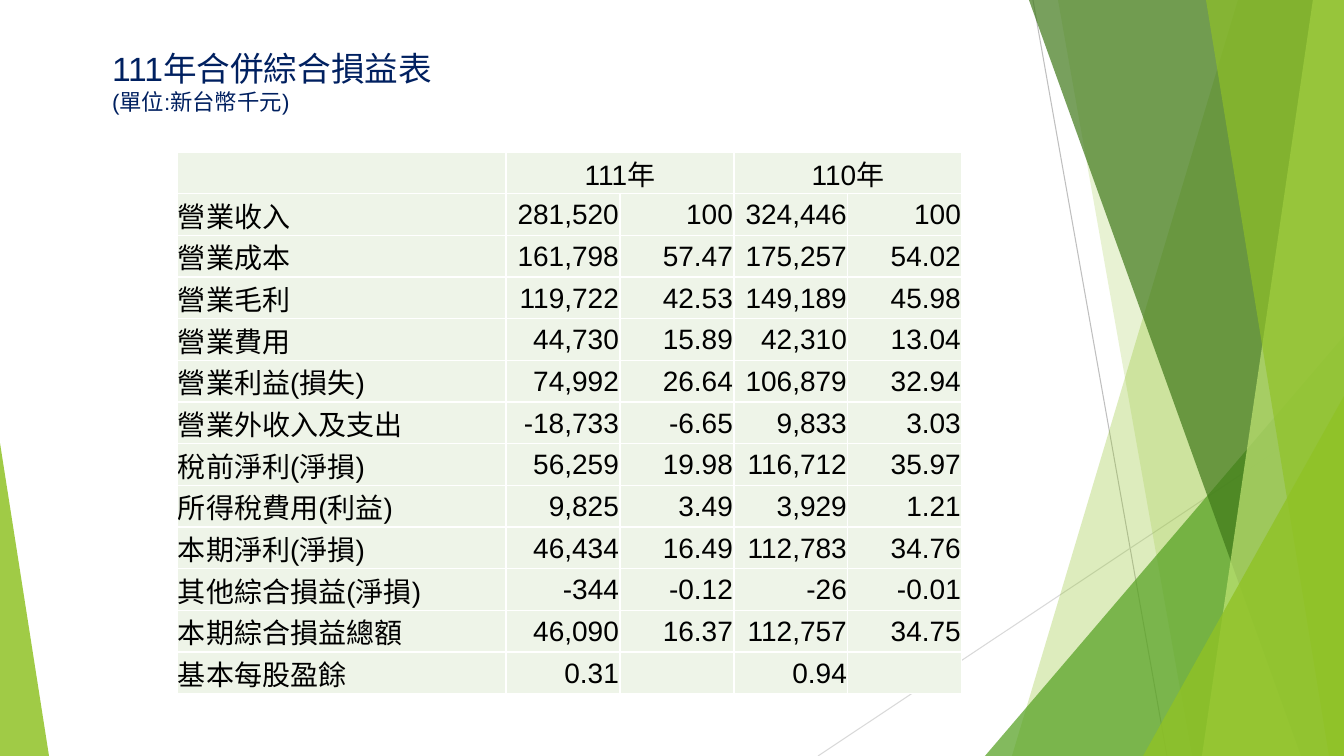
from lxml import etree
from pptx import Presentation
from pptx.dml.color import RGBColor
from pptx.enum.shapes import MSO_CONNECTOR, MSO_SHAPE
from pptx.enum.text import MSO_ANCHOR, MSO_AUTO_SIZE, PP_ALIGN
from pptx.oxml.ns import qn
from pptx.util import Pt

STRAIGHT = MSO_CONNECTOR.STRAIGHT
TRIANGLE = MSO_SHAPE.ISOSCELES_TRIANGLE
TOP, MIDDLE = MSO_ANCHOR.TOP, MSO_ANCHOR.MIDDLE
NO_AUTOFIT = MSO_AUTO_SIZE.NONE
LEFT, CENTER, RIGHT = PP_ALIGN.LEFT, PP_ALIGN.CENTER, PP_ALIGN.RIGHT

EMU_PER_PX = 914400 / 100.8
WIDTH, HEIGHT = 1344, 756
TITLE_ONLY = 5

INCOME_STATEMENT = [
    ("", "111年", "", "110年", ""),
    ("營業收入", "281,520", "100", "324,446", "100"),
    ("營業成本", "161,798", "57.47", "175,257", "54.02"),
    ("營業毛利", "119,722", "42.53", "149,189", "45.98"),
    ("營業費用", "44,730", "15.89", "42,310", "13.04"),
    ("營業利益(損失)", "74,992", "26.64", "106,879", "32.94"),
    ("營業外收入及支出", "-18,733", "-6.65", "9,833", "3.03"),
    ("稅前淨利(淨損)", "56,259", "19.98", "116,712", "35.97"),
    ("所得稅費用(利益)", "9,825", "3.49", "3,929", "1.21"),
    ("本期淨利(淨損)", "46,434", "16.49", "112,783", "34.76"),
    ("其他綜合損益(淨損)", "-344", "-0.12", "-26", "-0.01"),
    ("本期綜合損益總額", "46,090", "16.37", "112,757", "34.75"),
    ("基本每股盈餘", "0.31", "", "0.94", ""),
]


def px(length):
    return round(length * EMU_PER_PX)


def rgb(color):
    return RGBColor.from_string(color)


class StatementSlide:
    font = "Arial"
    title_color = "002060"
    text_color = "000000"
    cell_color = "EEF4E8"
    border_color = "FFFFFF"

    def __init__(self, deck):
        self.slide = deck.slides.add_slide(deck.slide_layouts[TITLE_ONLY])
        self.shapes = self.slide.shapes

    def style_run(self, run, size, color):
        run.font.name = self.font
        run.font.size = Pt(size)
        run.font.color.rgb = rgb(color)

    def line(self, x1, y1, x2, y2, color):
        line = self.shapes.add_connector(STRAIGHT, px(x1), px(y1), px(x2), px(y2))
        line.line.color.rgb = rgb(color)
        line.line.width = Pt(0.75)
        etree.SubElement(line.element.spPr, qn("a:effectLst"))

    def paint(self, shape, color, opacity):
        """Fill the shape at an opacity in percent, with no line or shadow."""
        shape.shadow.inherit = False
        shape.line.fill.background()
        shape.fill.solid()
        shape.fill.fore_color.rgb = rgb(color)
        color_node = shape.element.spPr.find(qn("a:solidFill"))[0]
        etree.SubElement(color_node, qn("a:alpha"), val=str(opacity * 1000))

    def slab(self, top_x, bottom_x, color, opacity):
        """Draw a full-height slanted panel reaching the right slide edge."""
        outline = self.shapes.build_freeform(top_x, 0, scale=EMU_PER_PX)
        outline.add_line_segments([(WIDTH, 0), (WIDTH, HEIGHT), (bottom_x, HEIGHT)])
        self.paint(outline.convert_to_shape(), color, opacity)

    def triangle(self, x, y, width, apex, color, opacity):
        """Draw a triangle standing on the bottom slide edge; apex is 0 to 1."""
        corner = self.shapes.add_shape(TRIANGLE, px(x), px(y), px(width), px(HEIGHT - y))
        corner.adjustments[0] = apex
        self.paint(corner, color, opacity)

    def title(self, x, y, width, height, text, sizes):
        title = self.shapes.title
        title.left, title.top = px(x), px(y)
        title.width, title.height = px(width), px(height)
        frame = title.text_frame
        frame.text = text
        frame.word_wrap = True
        frame.auto_size = NO_AUTOFIT
        frame.vertical_anchor = TOP
        heading = frame.paragraphs[0]
        heading.alignment = LEFT
        for run, size in zip(heading.runs, sizes):
            self.style_run(run, size, self.title_color)
        # The heading lies in front of the decoration.
        title.element.getparent().append(title.element)

    def cell(self, cell, text, alignment):
        cell.margin_left = cell.margin_right = cell.margin_top = px(1)
        cell.margin_bottom = 0
        cell.vertical_anchor = MIDDLE
        properties = cell._tc.get_or_add_tcPr()
        for side in ("a:lnL", "a:lnR", "a:lnT", "a:lnB"):
            border = etree.SubElement(properties, qn(side), w=str(Pt(1)))
            fill = etree.SubElement(border, qn("a:solidFill"))
            etree.SubElement(fill, qn("a:srgbClr"), val=self.border_color)
        cell.fill.solid()
        cell.fill.fore_color.rgb = rgb(self.cell_color)
        if text:
            cell.text_frame.text = text
            entry = cell.text_frame.paragraphs[0]
            entry.alignment = alignment
            self.style_run(entry.runs[0], 20, self.text_color)

    def table(self, x, y, widths, height, rows):
        frame = self.shapes.add_table(
            len(rows), len(widths), px(x), px(y), px(sum(widths)), px(height))
        table = frame.table
        table.first_row = table.horz_banding = False
        for column, width in zip(table.columns, widths):
            column.width = px(width)
        for year_col in (1, 3):
            table.cell(0, year_col).merge(table.cell(0, year_col + 1))
        for r, row in enumerate(rows):
            for c, text in enumerate(row):
                alignment = LEFT if c == 0 else CENTER if r == 0 else RIGHT
                self.cell(table.cell(r, c), text, alignment)


def main():
    deck = Presentation()
    deck.slide_width, deck.slide_height = px(WIDTH), px(HEIGHT)
    page = StatementSlide(deck)

    page.line(1033, 0, 1167, HEIGHT, "BFBFBF")
    page.line(WIDTH, 406, 818, HEIGHT, "D9D9D9")
    page.slab(1238, 1012, "90C226", 30)
    page.slab(1058, 1192, "90C226", 20)
    page.triangle(985, 336, 359, 1, "54A021", 72)
    page.slab(1029, 1301, "3F7819", 70)
    page.slab(1313, 1202, "C0E474", 70)
    page.slab(1206, 1329, "90C226", 65)
    page.triangle(1143, 396, 201, 1, "90C226", 80)
    page.triangle(0, 443, 49, 0, "90C226", 85)

    page.title(102, 43, 948, 145, "111年合併綜合損益表\v(單位:新台幣千元)", (24, 16))
    page.table(177, 152, [329] + [114] * 4, 541, INCOME_STATEMENT)

    deck.save("out.pptx")


if __name__ == "__main__":
    main()
